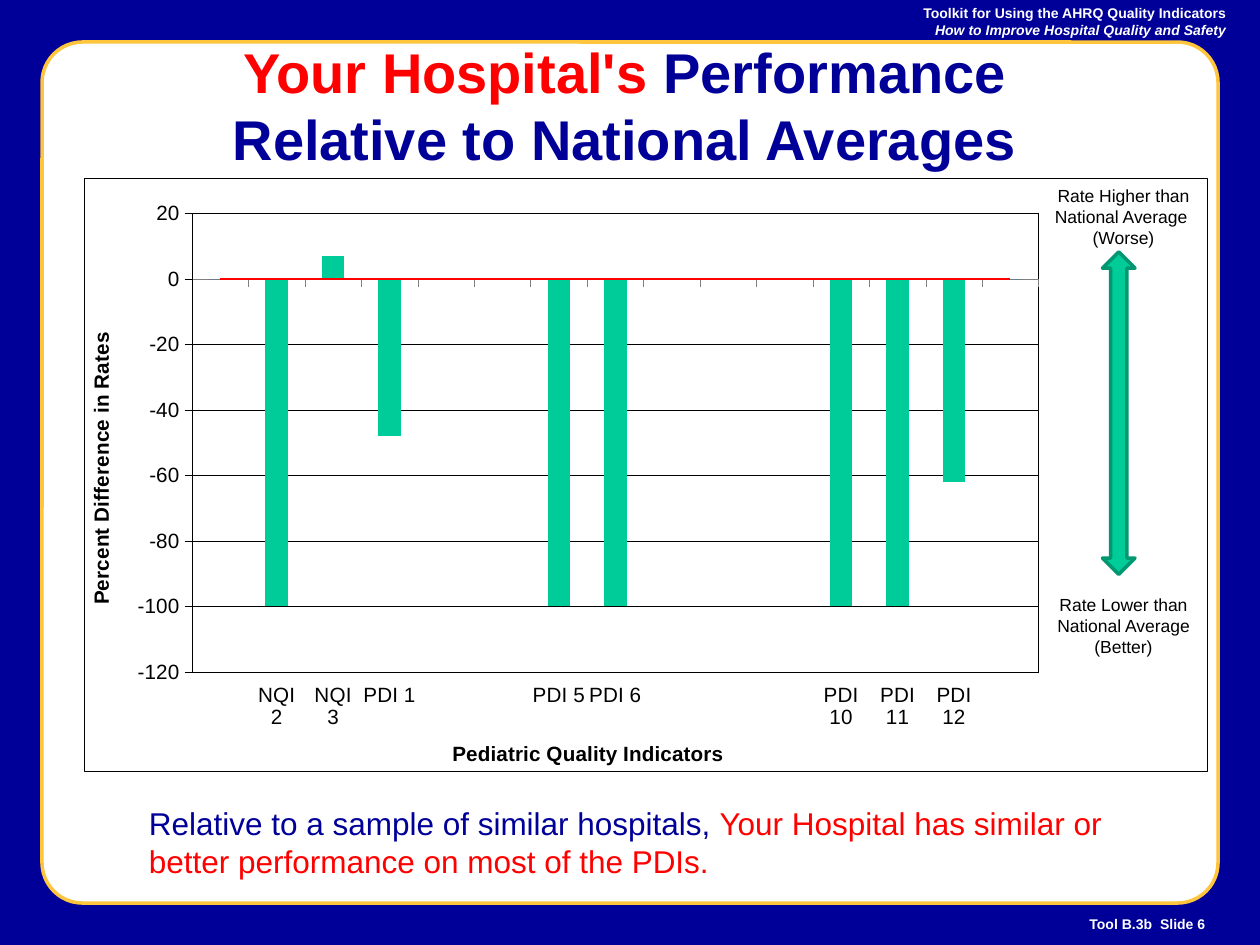
from lxml.etree import SubElement
from pptx import Presentation
from pptx.chart.data import CategoryChartData
from pptx.dml.color import RGBColor
from pptx.enum.chart import XL_CHART_TYPE, XL_TICK_LABEL_POSITION, XL_TICK_MARK
from pptx.enum.shapes import MSO_SHAPE
from pptx.enum.text import MSO_ANCHOR, PP_ALIGN
from pptx.oxml import parse_xml
from pptx.oxml.ns import nsdecls, qn
from pptx.util import Inches, Pt

NAVY = RGBColor(0x00, 0x00, 0x99)
WHITE = RGBColor(0xFF, 0xFF, 0xFF)
BLACK = RGBColor(0x00, 0x00, 0x00)
GRAY = RGBColor(0x80, 0x80, 0x80)
RED = RGBColor(0xFF, 0x00, 0x00)
GOLD = RGBColor(0xFF, 0xC5, 0x3D)
GREEN = RGBColor(0x00, 0xCC, 0x99)
DARK_GREEN = RGBColor(0x00, 0x97, 0x71)
BLUE = RGBColor(0x33, 0x33, 0xCC)

COLUMNS, ROWS = 120, 90
CELL = Inches(10) / COLUMNS

presentation = Presentation()
presentation.slide_width = int(COLUMNS * CELL)
presentation.slide_height = int(ROWS * CELL)
slide = presentation.slides.add_slide(presentation.slide_layouts[6])


def add_text(paragraphs, *box, size, bold=False, align=PP_ALIGN.LEFT, anchor=MSO_ANCHOR.TOP):
    """Each paragraph is a list of (text, color, italic) runs; box is in grid cells."""
    frame = slide.shapes.add_textbox(*(int(n * CELL) for n in box)).text_frame
    frame.word_wrap = True
    frame.vertical_anchor = anchor
    for index, runs in enumerate(paragraphs):
        paragraph = frame.add_paragraph() if index else frame.paragraphs[0]
        paragraph.alignment = align
        for text, color, italic in runs:
            run = paragraph.add_run()
            run.text = text
            run.font.name, run.font.size = "Arial", Pt(size)
            run.font.bold, run.font.italic = bold, italic
            run.font.color.rgb = color


def add_panel(kind, *box, fill, line=None):
    shape = slide.shapes.add_shape(kind, *(int(n * CELL) for n in box))
    shape.shadow.inherit = False
    shape.fill.solid()
    shape.fill.fore_color.rgb = fill
    if line is None:
        shape.line.fill.background()
    else:
        shape.line.color.rgb = line
        shape.line.width = Pt(2)
    return shape


# Frame, header and footer
add_panel(MSO_SHAPE.RECTANGLE, 0, 0, COLUMNS, ROWS, fill=NAVY)
frame_panel = add_panel(MSO_SHAPE.ROUNDED_RECTANGLE, 4, 4, 112, 82, fill=WHITE, line=GOLD)
frame_panel.adjustments[0] = 0.047
add_text([[("Toolkit for Using the AHRQ Quality Indicators", WHITE, False)],
          [("How to Improve Hospital Quality and Safety", WHITE, True)]],
         2, 0, 116, 4, size=8, bold=True, align=PP_ALIGN.RIGHT, anchor=MSO_ANCHOR.MIDDLE)
add_text([[("Tool B.3b  Slide 6", WHITE, False)]],
         2, 86, 114, 4, size=8, bold=True, align=PP_ALIGN.RIGHT, anchor=MSO_ANCHOR.MIDDLE)

# Chart
rates = [("", None), ("NQI 2", -100), ("NQI 3", 7), ("PDI 1", -48), ("", None),
         ("", 0), ("PDI 5", -100), ("PDI 6", -100), ("", 0), ("", 0), ("", 0),
         ("PDI 10", -100), ("PDI 11", -100), ("PDI 12", -62), ("", 0)]
chart_data = CategoryChartData()
chart_data.categories = [label for label, _ in rates]
chart_data.add_series("Series 1", [rate for _, rate in rates])
chart_data.add_series("Series 2", [0] * len(rates))
chart = slide.shapes.add_chart(
    XL_CHART_TYPE.COLUMN_CLUSTERED,
    *(int(n * CELL) for n in (8, 17, 107, 56.5)), chart_data).chart
chart.has_legend = False
chart.has_title = False
chart.font.name, chart.font.size = "Arial", Pt(11.8)
chart.font.color.rgb = BLACK

plot = chart.plots[0]
plot.gap_width, plot.overlap = 150, 100
plot.vary_by_categories = False
for series, color in zip(plot.series, (GREEN, BLUE)):
    series.invert_if_negative = False
    series.format.fill.solid()
    series.format.fill.fore_color.rgb = color

value_axis, category_axis = chart.value_axis, chart.category_axis
value_axis.minimum_scale, value_axis.maximum_scale = -120, 20
value_axis.major_unit = 20
category_axis.tick_label_position = XL_TICK_LABEL_POSITION.LOW
value_axis.has_major_gridlines = True
gridlines = value_axis.major_gridlines.format.line
for line, color in ((gridlines, BLACK), (value_axis.format.line, BLACK),
                    (category_axis.format.line, GRAY)):
    line.color.rgb = color
    line.width = Pt(0.25)
for axis, title in ((value_axis, "Percent Difference in Rates "),
                    (category_axis, "Pediatric Quality Indicators")):
    axis.major_tick_mark = XL_TICK_MARK.OUTSIDE
    axis.minor_tick_mark = XL_TICK_MARK.NONE
    axis.axis_title.text_frame.text = title
    font = axis.axis_title.text_frame.paragraphs[0].runs[0].font
    font.name, font.size, font.bold = "Arial", Pt(11.8), True
    font.color.rgb = BLACK

# Zero line: linear trend of the second series
trend_line = parse_xml(
    f'<c:trendline {nsdecls("c", "a")}><c:spPr><a:ln w="{Pt(1.5)}"><a:solidFill>'
    f'<a:srgbClr val="{RED}"/></a:solidFill></a:ln></c:spPr>'
    '<c:trendlineType val="linear"/><c:dispRSqr val="0"/><c:dispEq val="0"/></c:trendline>')
plot.series[1]._element.find(qn("c:cat")).addprevious(trend_line)

# Plot position, white areas and thin borders
chart_space = chart._chartSpace
plot_area = chart_space.find(".//" + qn("c:plotArea"))
for old_layout in plot_area.findall(qn("c:layout")):
    plot_area.remove(old_layout)
layout = parse_xml(f'<c:layout {nsdecls("c")}><c:manualLayout/></c:layout>')
for tag, value in (("layoutTarget", "inner"), ("xMode", "edge"), ("yMode", "edge"),
                   ("x", "0.096"), ("y", "0.059"), ("w", "0.754"), ("h", "0.773")):
    SubElement(layout[0], qn("c:" + tag)).set("val", value)
plot_area.insert(0, layout)
area_format = (
    f'<c:spPr {nsdecls("c", "a")}><a:solidFill><a:srgbClr val="{WHITE}"/></a:solidFill>'
    f'<a:ln w="{Pt(0.25)}"><a:solidFill><a:srgbClr val="{BLACK}"/></a:solidFill></a:ln></c:spPr>')
plot_area.append(parse_xml(area_format))
chart_space.find(qn("c:chart")).addnext(parse_xml(area_format))

# Title, conclusion and reading guide
add_text([[("Relative to a sample of similar hospitals, ", NAVY, False),
           ("Your Hospital has similar or better performance on most of the PDIs.", RED, False)]],
         13, 76, 96, 8.4, size=18)
add_text([[("Your Hospital's", RED, False),
           (" Performance Relative to National Averages", NAVY, False)]],
         11, 4, 97, 12, size=32, bold=True, align=PP_ALIGN.CENTER, anchor=MSO_ANCHOR.MIDDLE)
add_panel(MSO_SHAPE.UP_DOWN_ARROW, 105, 24, 3.1, 30.7, fill=GREEN, line=DARK_GREEN)
for row, label in ((17, "Rate Higher than National Average  (Worse)"),
                   (56, "Rate Lower than National Average (Better)")):
    add_text([[(label, BLACK, False)]], 98, row, 18, 5.5, size=10, align=PP_ALIGN.CENTER)

presentation.save("out.pptx")
